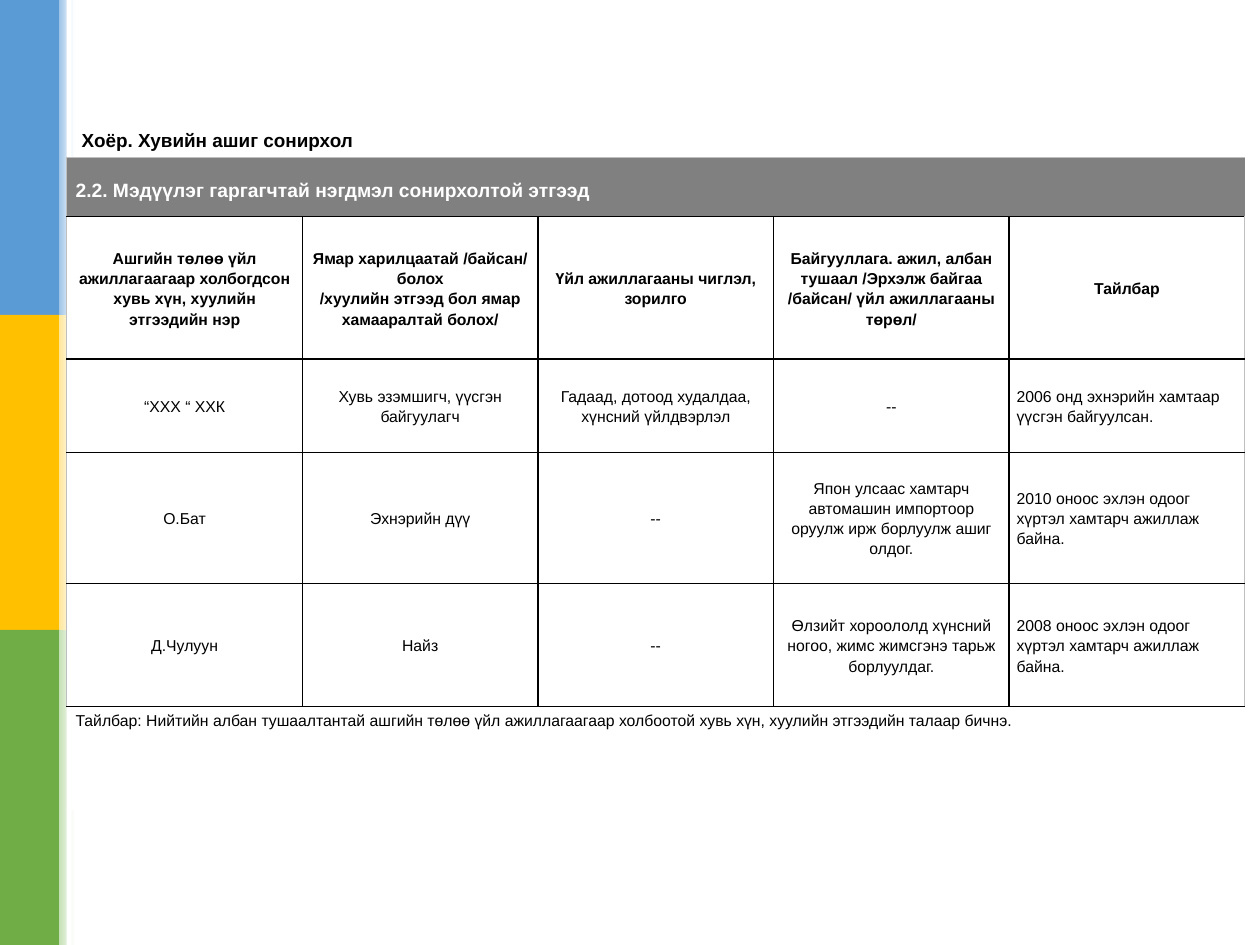
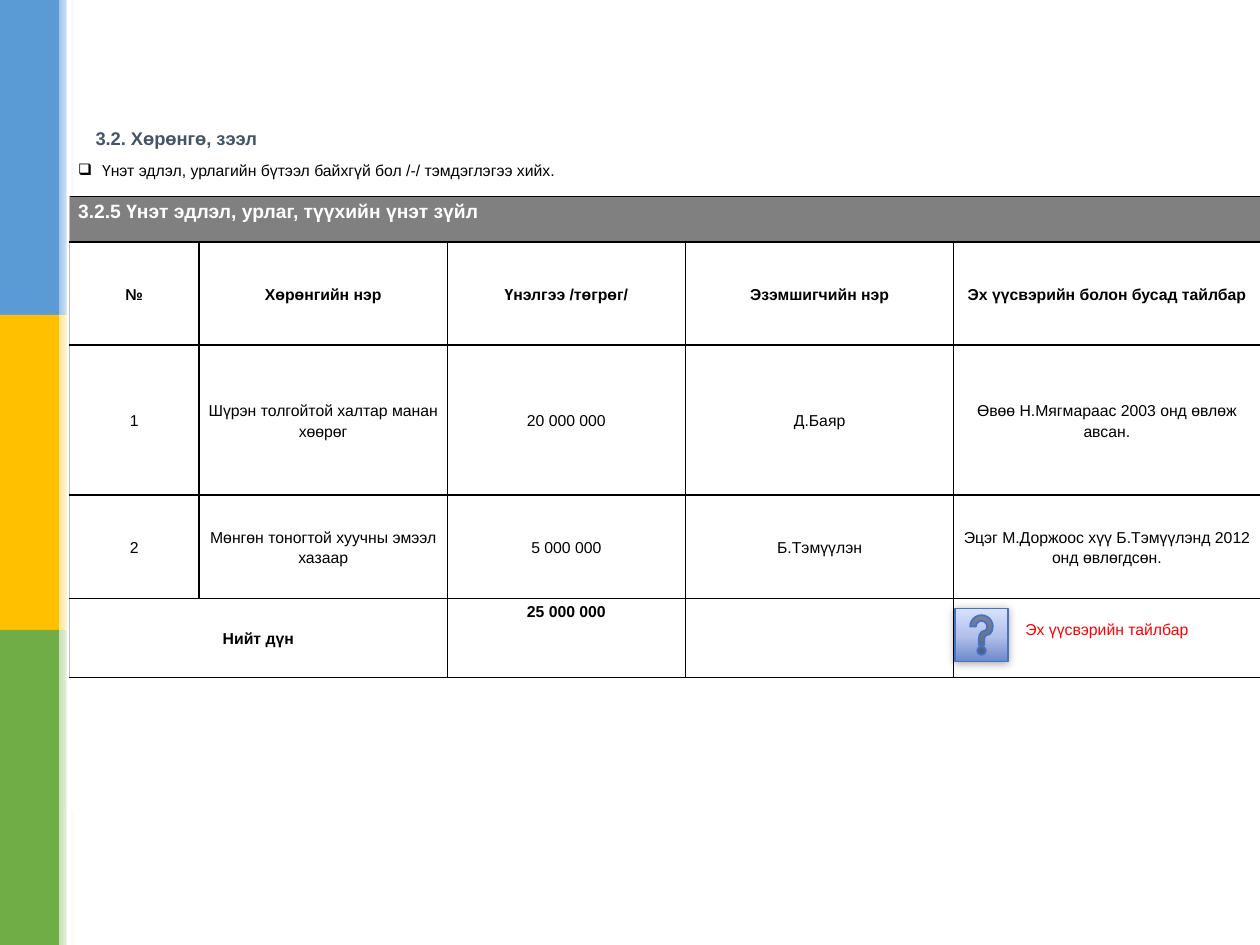
from lxml import etree
from pptx import Presentation
from pptx import oxml, util as u
from pptx.dml import color
from pptx.enum import shapes, text
from pptx.oxml import ns

# ---- Content ----
FONT = "Arial"
COLORS = {
    "black": "000000", "white": "FFFFFF", "slate": "44546A", "band": "808080",
    "red": "FF0000", "outer": "BFBFBF", "button_line": "4472C4",
}
SIDE_BARS = [("5B9BD5", "9DC3E6"), ("FFC000", "FFE699"), ("70AD47", "C5E0B4")]
BUTTON_STOPS = [(0, "6D89CB"), (48, "B2C0EA"), (100, "D8E1FE")]

# Each row: height, kind, cell texts (None continues the cell to its left)
INTERESTS = {
    "title": "Хоёр. Хувийн ашиг сонирхол",
    "title_box": (0.55, 0.8, 7.5, 0.5),
    "title_format": {"size": 10.8, "color": "black", "anchor": "BOTTOM"},
    "corner": (0.53, 1.25),
    "columns": [1.87] * 5,
    "edges": ["outer"] + ["black"] * 5 + [None],
    "left_column": 4,
    "rows": [
        (0.47, "low_band", ["2.2. Мэдүүлэг гаргагчтай нэгдмэл сонирхолтой этгээд"] + [None] * 4),
        (1.13, "header", [
            "Ашгийн төлөө үйл ажиллагаагаар холбогдсон хувь хүн, хуулийн этгээдийн нэр",
            "Ямар харилцаатай /байсан/ болох\n/хуулийн этгээд бол ямар хамааралтай болох/",
            "Үйл ажиллагааны чиглэл, зорилго",
            "Байгууллага. ажил, албан тушаал /Эрхэлж байгаа /байсан/ үйл ажиллагааны төрөл/",
            "Тайлбар"]),
        (0.74, "body", [
            "“ХХХ “ ХХК", "Хувь эзэмшигч, үүсгэн байгуулагч",
            "Гадаад, дотоод худалдаа, хүнсний үйлдвэрлэл", "--",
            "2006 онд эхнэрийн хамтаар үүсгэн байгуулсан."]),
        (1.04, "body", [
            "О.Бат", "Эхнэрийн дүү", "--",
            "Япон улсаас хамтарч автомашин импортоор оруулж ирж борлуулж ашиг олдог.",
            "2010 оноос эхлэн одоог хүртэл хамтарч ажиллаж байна."]),
        (0.98, "body", [
            "Д.Чулуун", "Найз", "--",
            "Өлзийт хороололд хүнсний ногоо, жимс жимсгэнэ тарьж борлуулдаг.",
            "2008 оноос эхлэн одоог хүртэл хамтарч ажиллаж байна."]),
        (0.82, "note", [
            "Тайлбар: Нийтийн албан тушаалтантай ашгийн төлөө үйл ажиллагаагаар "
            "холбоотой хувь хүн, хуулийн этгээдийн талаар бичнэ."] + [None] * 4),
    ],
}
VALUABLES = {
    "title": "3.2. Хөрөнгө, зээл",
    "title_box": (0.66, 0.94, 6.78, 0.31),
    "title_format": {"size": 10.5, "color": "slate", "anchor": "MIDDLE"},
    "corner": (0.55, 1.25),
    "columns": [1.03, 1.97, 1.89, 2.13, 2.43],
    "edges": [None] + ["black"] * 6 + [None],
    "left_column": None,
    "rows": [
        (0.31, "bullet", ["Үнэт эдлэл, урлагийн бүтээл байхгүй бол /-/ тэмдэглэгээ хийх."] + [None] * 4),
        (0.36, "band", ["3.2.5 Үнэт эдлэл, урлаг, түүхийн үнэт зүйл"] + [None] * 4),
        (0.82, "header", ["№", "Хөрөнгийн нэр", "Үнэлгээ /төгрөг/", "Эзэмшигчийн нэр",
                          "Эх үүсвэрийн болон бусад тайлбар"]),
        (1.19, "body", ["1", "Шүрэн толгойтой халтар манан хөөрөг", "20 000 000", "Д.Баяр",
                        "Өвөө Н.Мягмараас 2003 онд өвлөж авсан."]),
        (0.82, "body", ["2", "Мөнгөн тоногтой хуучны эмээл хазаар", "5 000 000", "Б.Тэмүүлэн",
                        "Эцэг М.Доржоос хүү Б.Тэмүүлэнд 2012 онд өвлөгдсөн."]),
        (0.63, "total", ["Нийт дүн", None, "25 000 000", "", "Эх үүсвэрийн тайлбар"]),
        (1.05, "note", [""] + [None] * 4),
    ],
}

# ---- Formats of the table rows ----
GRID = {"anchor": "MIDDLE", "align": "CENTER", "spacing": 1.15, "insets": (0.06, 0, 0.06, 0)}
FREE = {"insets": (0.07, 0.04, 0.07, 0.04)}
LOWERED = {"insets": (0.07, 0.18, 0.07, 0.04)}
BAND = {"size": 11, "color": "white", "bold": True}
ROW_FORMATS = {
    "low_band": BAND | LOWERED,
    "band": BAND | FREE,
    "header": GRID | {"bold": True},
    "body": GRID,
    "total": GRID | {"bold": True},
    "note": FREE,
    "bullet": FREE | {"bullet": "❑"},
}
TOTAL_FORMATS = {
    2: FREE | {"bold": True, "align": "CENTER"},
    4: LOWERED | {"color": "red", "align": "CENTER"},
}


def rgb(value):
    return color.RGBColor.from_string(value)


def write_text(frame, content, size=9, color="black", bold=False, align="LEFT",
               anchor="TOP", spacing=None, insets=(0.1, 0.05, 0.1, 0.05), bullet=None):
    """Fill a text frame, one paragraph for each line of content."""
    frame.word_wrap = True
    frame.vertical_anchor = getattr(text.MSO_ANCHOR, anchor)
    for side, inset in zip(("left", "top", "right", "bottom"), insets):
        setattr(frame, "margin_" + side, u.Inches(inset))
    for index, line in enumerate(content.split("\n")):
        paragraph = frame.add_paragraph() if index else frame.paragraphs[0]
        paragraph.alignment = getattr(text.PP_ALIGN, align)
        if spacing:
            paragraph.line_spacing = spacing
        if bullet:
            properties = paragraph._p.get_or_add_pPr()
            properties.set("marL", str(u.Inches(0.19)))
            properties.set("indent", str(-u.Inches(0.19)))
            etree.SubElement(properties, ns.qn("a:buChar")).set("char", bullet)
        if line:
            run = paragraph.add_run()
            run.text = line
            run.font.name, run.font.size, run.font.bold = FONT, u.Pt(size), bold
            run.font.color.rgb = rgb(COLORS[color])


def add_block(slide, kind, box, fill):
    shape = slide.shapes.add_shape(kind, *map(u.Inches, box))
    shape.shadow.inherit = False
    shape.line.fill.background()
    shape.fill.solid()
    shape.fill.fore_color.rgb = rgb(fill)
    return shape


def set_gradient(shape, stops, angle):
    stop_xml = "".join(f'<a:gs pos="{position * 1000}"><a:srgbClr val="{value}"/></a:gs>'
                       for position, value in stops)
    gradient = oxml.parse_xml(
        f'<a:gradFill {ns.nsdecls("a")} rotWithShape="1"><a:gsLst>{stop_xml}</a:gsLst>'
        f'<a:lin ang="{angle * 60000}" scaled="0"/></a:gradFill>')
    properties = shape._element.spPr
    properties.replace(properties.find(ns.qn("a:solidFill")), gradient)


def add_side_bars(slide):
    rectangle, height = shapes.MSO_SHAPE.RECTANGLE, 2.5
    for index, (strong, pale) in enumerate(SIDE_BARS):
        add_block(slide, rectangle, (0, index * height, 0.47, height), strong)
        fade = add_block(slide, rectangle, (0.47, index * height, 0.12, height), pale)
        set_gradient(fade, [(0, pale), (100, COLORS["white"])], 0)
    add_block(slide, rectangle, (0.53, 0, 0.04, 7.5), COLORS["white"])


def set_borders(cell, left, right, top, bottom):
    properties = cell._tc.get_or_add_tcPr()
    for index, (side, name) in enumerate(zip("LRTB", (left, right, top, bottom))):
        paint = (f'<a:solidFill><a:srgbClr val="{COLORS[name]}"/></a:solidFill>'
                 if name else "<a:noFill/>")
        width = u.Pt(0.5 if name == "outer" else 1)
        properties.insert(index, oxml.parse_xml(
            f'<a:ln{side} {ns.nsdecls("a")} w="{width}">{paint}</a:ln{side}>'))


def add_grid(slide, content):
    rows, columns, edges = content["rows"], content["columns"], content["edges"]
    size = (sum(columns), sum(row[0] for row in rows))
    frame = slide.shapes.add_table(len(rows), len(columns),
                                   *map(u.Inches, content["corner"] + size))
    table = frame.table
    for column, width in zip(table.columns, columns):
        column.width = u.Inches(width)
    for r, (height, kind, cells) in enumerate(rows):
        table.rows[r].height = u.Inches(height)
        side = None if kind in ("note", "bullet") else "outer"
        # A vertical line stands wherever a new cell begins
        uprights = [side] + [None if value is None else "black" for value in cells[1:]] + [side]
        for c, value in enumerate(cells):
            cell = table.cell(r, c)
            style = dict(ROW_FORMATS[kind])
            if kind == "total":
                style = TOTAL_FORMATS.get(c, style)
            if kind == "body" and c == content["left_column"]:
                style["align"] = "LEFT"
            insets = style.pop("insets")
            write_cell(cell, value or "", insets, style)
            if kind == "bullet":
                cell.fill.background()
            else:
                cell.fill.solid()
                cell.fill.fore_color.rgb = rgb(COLORS["band" if "band" in kind else "white"])
            set_borders(cell, uprights[c], uprights[c + 1], edges[r], edges[r + 1])
        # Merge each text with the empty places after it
        starts = [c for c, value in enumerate(cells) if value is not None] + [len(cells)]
        for first, following in zip(starts, starts[1:]):
            if following - first > 1:
                table.cell(r, first).merge(table.cell(r, following - 1))


def write_cell(cell, content, insets, style):
    """Cells hold their own margins and anchor, apart from the text frame."""
    write_text(cell.text_frame, content, **style)
    body = cell.text_frame._txBody.find(ns.qn("a:bodyPr"))
    body.attrib.clear()
    cell.vertical_anchor = getattr(text.MSO_ANCHOR, style.get("anchor", "TOP"))
    for side, inset in zip(("left", "top", "right", "bottom"), insets):
        setattr(cell, "margin_" + side, u.Inches(inset))


def add_help_button(slide):
    button = add_block(slide, shapes.MSO_SHAPE.ACTION_BUTTON_HELP,
                       (7.58, 4.83, 0.42, 0.42), BUTTON_STOPS[0][1])
    set_gradient(button, BUTTON_STOPS, 270)
    button.line.color.rgb = rgb(COLORS["button_line"])
    button.line.width = u.Pt(1)
    button._element.spPr.find(ns.qn("a:effectLst")).append(oxml.parse_xml(
        f'<a:outerShdw {ns.nsdecls("a")} blurRad="{u.Pt(5)}" dist="{u.Pt(1)}" dir="5400000">'
        f'<a:srgbClr val="{COLORS["black"]}"><a:alpha val="32000"/></a:srgbClr></a:outerShdw>'))


def add_form_slide(presentation, content):
    slide = presentation.slides.add_slide(presentation.slide_layouts[6])
    add_side_bars(slide)
    title = slide.shapes.add_textbox(*map(u.Inches, content["title_box"]))
    insets = (0.1, 0.05, 0.1, 0.1 if content["title_format"]["anchor"] == "BOTTOM" else 0.05)
    write_text(title.text_frame, content["title"], bold=True, insets=insets,
               **content["title_format"])
    add_grid(slide, content)
    return slide


def main():
    presentation = Presentation()
    presentation.slide_width, presentation.slide_height = u.Inches(10), u.Inches(7.5)
    add_form_slide(presentation, INTERESTS)
    add_help_button(add_form_slide(presentation, VALUABLES))
    presentation.save("out.pptx")


if __name__ == "__main__":
    main()
